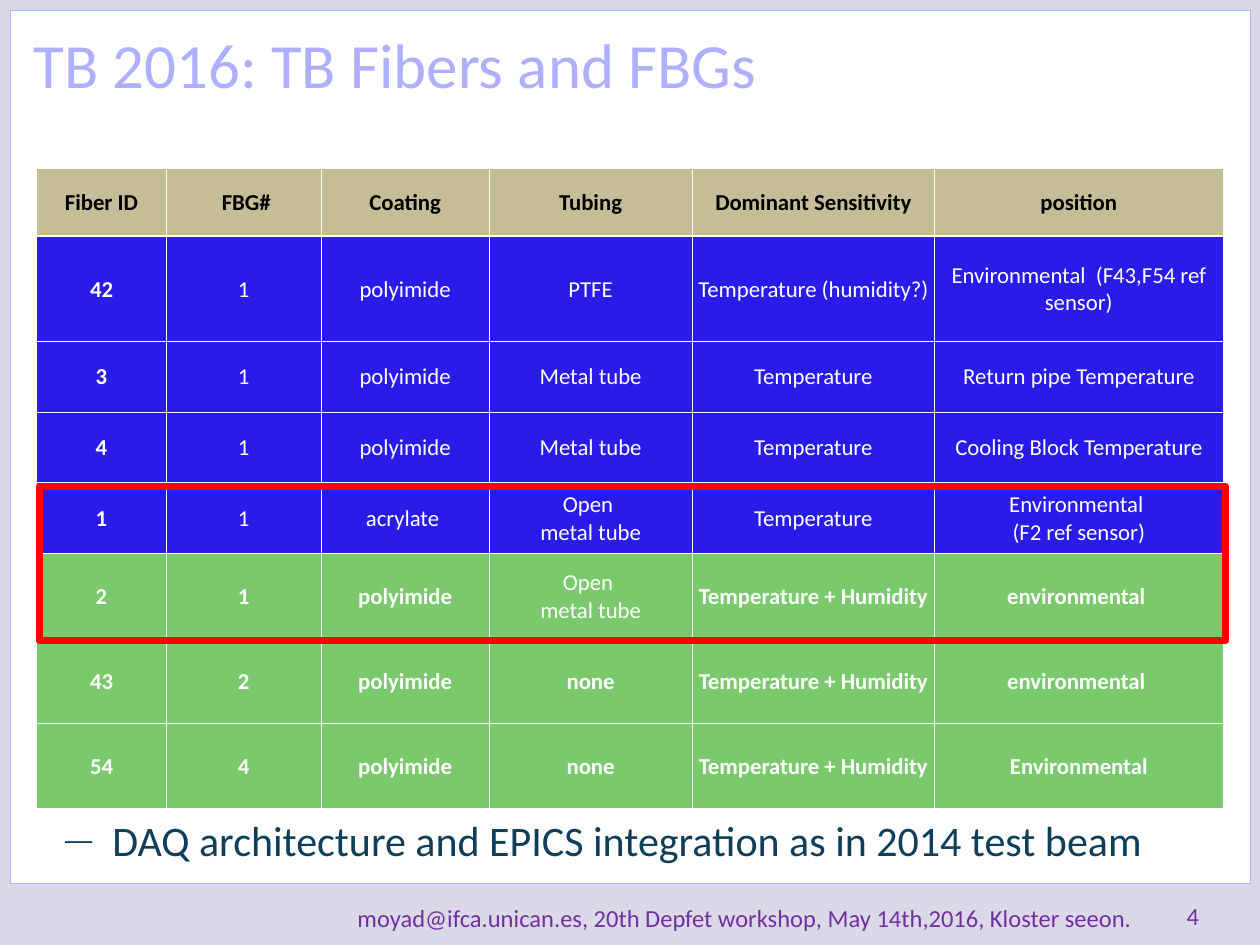
from lxml.etree import SubElement
from pptx import Presentation
from pptx.dml.color import RGBColor
from pptx.enum.shapes import MSO_SHAPE
from pptx.enum.text import MSO_ANCHOR, MSO_AUTO_SIZE, PP_ALIGN
from pptx.oxml.ns import qn
from pptx.util import Pt


def rgb(code):
    return RGBColor.from_string(code)


def write(par, text, size, color, bold=False):
    """Add text to a paragraph, with a line break at each newline."""
    for i, line in enumerate(text.split("\n")):
        if i:
            par.add_line_break()
        run = par.add_run()
        run.text = line
        font = run.font
        font.name, font.size, font.bold = "Calibri", Pt(size), bold
        font.color.rgb = rgb(color)


deck = Presentation()
deck.slide_width, deck.slide_height = Pt(720), Pt(540)
slide = deck.slides.add_slide(deck.slide_layouts[1])
slide.background.fill.solid()
slide.background.fill.fore_color.rgb = rgb("DBD9E7")
shapes = slide.shapes
title, body = shapes.title, slide.placeholders[1]

# White panel, moved behind the placeholders
panel = shapes.add_shape(MSO_SHAPE.RECTANGLE, Pt(6), Pt(6), Pt(708.5), Pt(499))
panel.shadow.inherit = False
panel.fill.solid()
panel.fill.fore_color.rgb = rgb("FFFFFF")
panel.line.color.rgb = rgb("AFAFFF")
panel.line.width = Pt(0.25)
title.element.addprevious(panel.element)

# Title and list
for holder, area in ((title, (12, 11, 558, 90.5)), (body, (30, 462, 666, 48))):
    holder.left, holder.top, holder.width, holder.height = map(Pt, area)
    holder.text_frame.vertical_anchor = MSO_ANCHOR.TOP
    holder.text_frame.auto_size = MSO_AUTO_SIZE.NONE

par = title.text_frame.paragraphs[0]
par.alignment = PP_ALIGN.LEFT
write(par, "TB 2016: TB Fibers and FBGs", 36, "AFAFFF")

par = body.text_frame.paragraphs[0]
props = par._p.get_or_add_pPr()
props.set("marL", str(Pt(27)))
props.set("indent", str(-Pt(27)))
par.space_before = Pt(0)
SubElement(SubElement(props, qn("a:buClr")), qn("a:srgbClr"), val="0E3E58")
SubElement(props, qn("a:buSzPct"), val="65000")
SubElement(props, qn("a:buChar"), char="—")
write(par, "DAQ architecture and EPICS integration as in 2014 test beam", 24, "0E3E58")

# Footer
footer = "moyad@ifca.unican.es, 20th Depfet workshop, May 14th,2016, Kloster seeon."
for text, area, align in (
    ("4", (671, 499, 42, 36), PP_ALIGN.LEFT),
    (footer, (132, 500.5, 522, 36), PP_ALIGN.RIGHT),
):
    frame = shapes.add_textbox(*map(Pt, area)).text_frame
    frame.word_wrap = True
    frame.vertical_anchor = MSO_ANCHOR.BOTTOM
    frame.paragraphs[0].alignment = align
    write(frame.paragraphs[0], text, 14, "7030A0")

# Table of fibers
TAN, BLUE, GREEN = "C4BD97", "2A1BEB", "7AC96C"
WARM, DAMP = "Temperature", "Temperature + Humidity"
OPEN = "Open \nmetal tube"
rows = [
    (39, TAN, ("Fiber ID", " FBG#", "Coating", "Tubing", "Dominant Sensitivity", "position")),
    (60, BLUE, ("42", "1", "polyimide", "PTFE", "Temperature (humidity?)",
                "Environmental  (F43,F54 ref sensor)")),
    (40.5, BLUE, ("3", "1", "polyimide", "Metal tube", WARM, "Return pipe Temperature")),
    (40.5, BLUE, ("4", "1", "polyimide", "Metal tube", WARM, "Cooling Block Temperature")),
    (40.5, BLUE, ("1", "1", "acrylate ", OPEN, WARM, "Environmental \n(F2 ref sensor)")),
    (48.5, GREEN, ("2", "1", "polyimide", OPEN, DAMP, "environmental ")),
    (48.5, GREEN, ("43", "2", "polyimide", "none", DAMP, "environmental ")),
    (48.5, GREEN, ("54", "4", "polyimide", "none", DAMP, "Environmental")),
]
widths = (74, 88.5, 96, 116, 138.5, 165)
high = sum(row[0] for row in rows)
table = shapes.add_table(
    len(rows), len(widths), Pt(21), Pt(96), Pt(sum(widths)), Pt(high)
).table
for col, width in zip(table.columns, widths):
    col.width = Pt(width)

for r, (height, fill, texts) in enumerate(rows):
    table.rows[r].height = Pt(height)
    for c, text in enumerate(texts):
        cell = table.cell(r, c)
        cell.vertical_anchor = MSO_ANCHOR.MIDDLE
        cell.margin_left = cell.margin_right = cell.margin_top = Pt(0.7)
        cell.margin_bottom = Pt(0)
        for side in "LRTB":
            thick = (r, side) in ((0, "B"), (1, "T"))
            edge = SubElement(cell._tc.get_or_add_tcPr(), qn(f"a:ln{side}"),
                              w=str(Pt(1.5 if thick else 0.5)))
            SubElement(SubElement(edge, qn("a:solidFill")), qn("a:srgbClr"), val="FFFFFF")
        cell.fill.solid()
        cell.fill.fore_color.rgb = rgb(fill)
        par = cell.text_frame.paragraphs[0]
        par.alignment = PP_ALIGN.CENTER
        bold = c == 0 or (fill != BLUE and text != OPEN)
        write(par, text, 13, "000000" if r == 0 else "FFFFFF", bold)

# Red frame around fibers 1 and 2
frame = shapes.add_shape(MSO_SHAPE.RECTANGLE, Pt(22.5), Pt(278), Pt(678), Pt(88))
frame.shadow.inherit = False
frame.fill.background()
frame.line.color.rgb = rgb("FF0000")
frame.line.width = Pt(4.25)
SubElement(frame.element.spPr.find(qn("a:ln")), qn("a:round"))

deck.save("out.pptx")
